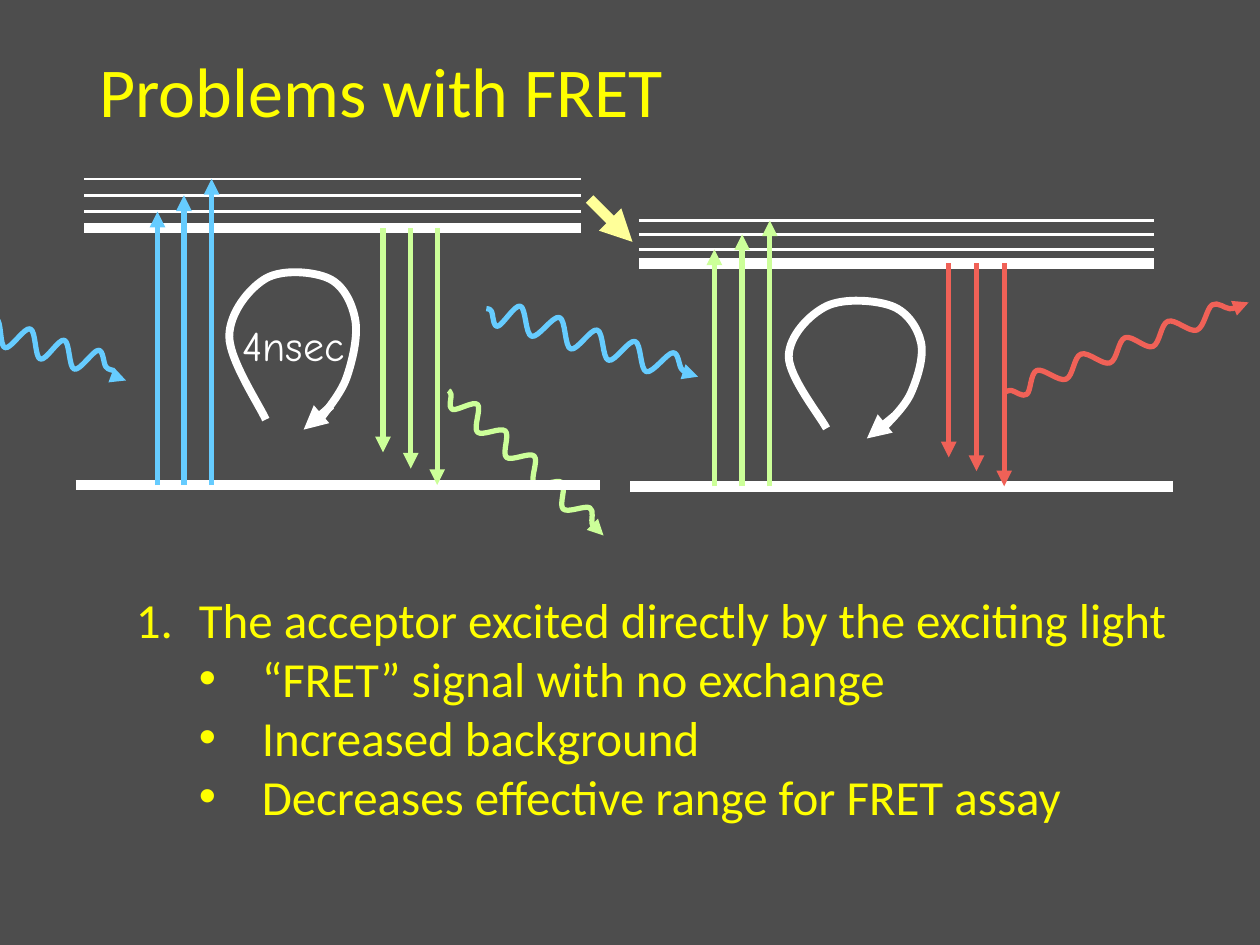
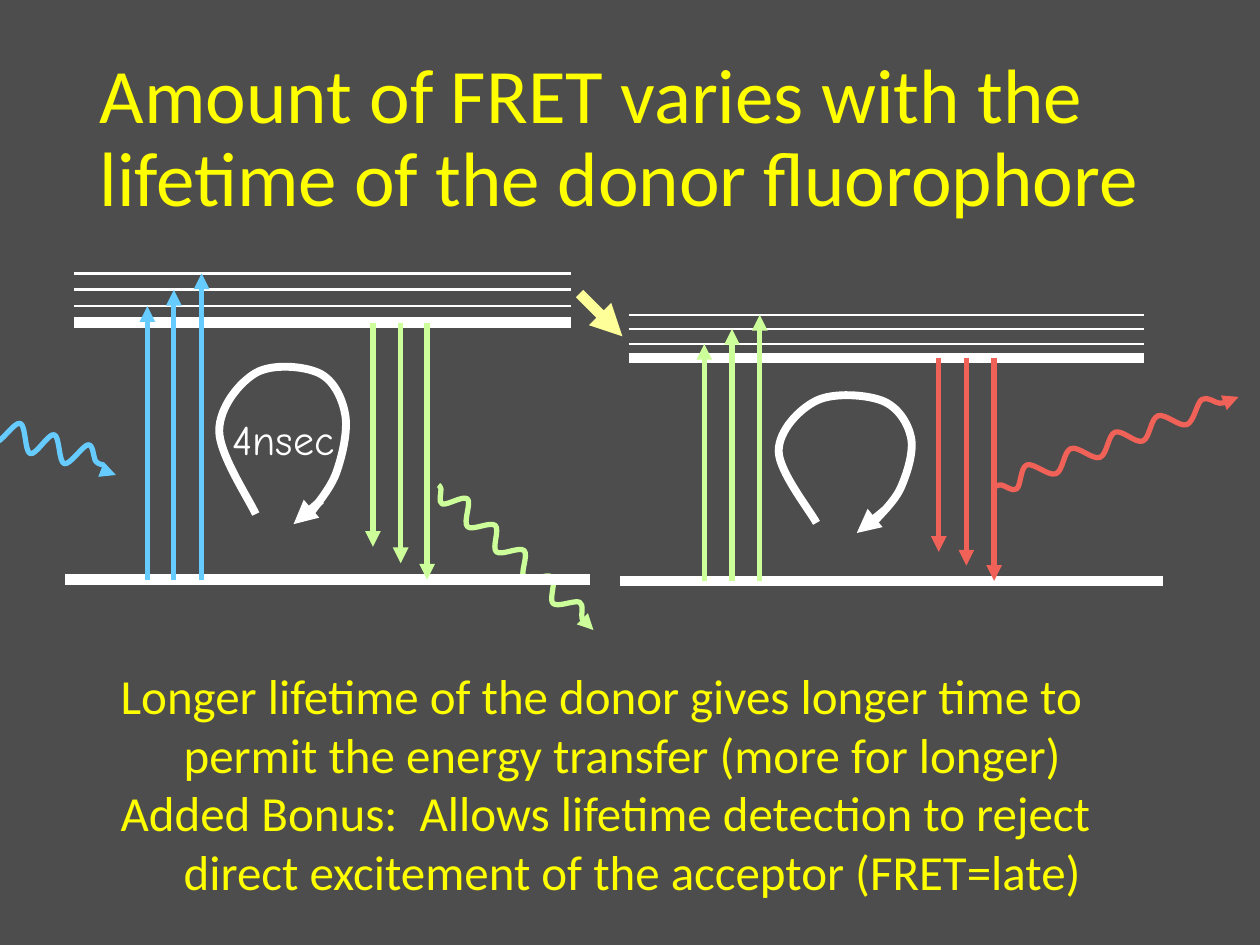
"""Build two slides on FRET with a shared donor and acceptor energy diagram."""
from lxml.etree import SubElement
from pptx import Presentation
from pptx.dml.color import RGBColor
from pptx.enum.shapes import MSO_CONNECTOR
from pptx.enum.text import MSO_ANCHOR, MSO_AUTO_SIZE, PP_ALIGN
from pptx.oxml.ns import qn
from pptx.util import Pt

PX = 9144
GRAY, WHITE, YELLOW, PALE_YELLOW = "4D4D4D", "FFFFFF", "FFFF00", "FFFF99"
BLUE, GREEN, RED = "66CCFF", "CCFF99", "F06157"
BODY_FONT, LABEL_FONT = "Calibri", "Comic Neue"
THIN, MEDIUM, LOOP, THICK = 1.5, 3, 4.5, 6

EXCITING_WAVE = [(-55, 247), (-52, 249), (-47, 261), (-30, 245), (-23, 268), (-3, 253), (4, 276),
                 (24, 261), (32, 285), (51, 270), (59, 293), (78, 278), (84, 291), (90, 294)]
DIRECT_WAVE = [(386, 245), (390, 247), (395, 259), (413, 243), (422, 267), (444, 252), (453, 277),
               (474, 262), (483, 286), (504, 271), (513, 295), (534, 280), (541, 293), (548, 297)]
DONOR_WAVE = [(356, 310), (358, 313), (359, 325), (379, 321), (379, 343), (401, 342), (402, 363),
              (424, 362), (424, 384), (446, 383), (447, 404), (468, 403), (470, 416), (475, 421)]
ACCEPTOR_WAVE = [(798, 311), (803, 310), (815, 313), (823, 294), (846, 301), (858, 281), (881, 288),
                 (893, 268), (915, 275), (927, 255), (950, 262), (962, 242), (976, 245), (984, 243)]
DONOR_LOOP = [(211, 333), (182, 267), (211, 221), (261, 221), (282, 254), (275, 300), (254, 333)]
ACCEPTOR_LOOP = [(656, 340), (626, 283), (656, 243), (708, 243), (731, 272), (723, 312), (701, 340)]


def color(value):
    """Turn a hex string into a colour."""
    return RGBColor.from_string(value)


def steps(first, last, count):
    """Return evenly spaced whole numbers from first to last."""
    return [round(first + (last - first) * index / (count - 1)) for index in range(count)]


class SlideWriter:
    """Hold the deck style and the current slide."""

    def __init__(self):
        """Start a deck with a dark background."""
        self.deck = Presentation()
        self.deck.slide_width, self.deck.slide_height = 1000 * PX, 750 * PX
        fill = self.deck.slide_master.background.fill
        fill.solid()
        fill.fore_color.rgb = color(GRAY)

    def start_page(self, title, size):
        """Add a slide and format its title."""
        self.page = self.deck.slides.add_slide(self.deck.slide_layouts[5])
        self.shapes, self.shift = self.page.shapes, (0, 0)
        box = self.page.shapes.title
        self.place(box, 69, 40, 862, 145)
        frame = box.text_frame
        frame.word_wrap, frame.auto_size = True, MSO_AUTO_SIZE.NONE
        frame.vertical_anchor = MSO_ANCHOR.TOP
        para = frame.paragraphs[0]
        para.alignment, para.line_spacing = PP_ALIGN.LEFT, 0.9
        self.span(para, title, size)

    def start_group(self, shift):
        """Collect the next elements in a group moved by shift."""
        self.shapes, self.shift = self.page.shapes.add_group_shape().shapes, shift

    def end_group(self):
        """Return to the slide itself."""
        self.shapes, self.shift = self.page.shapes, (0, 0)

    def place(self, box, left, top, width, height):
        """Set the position and size of a box."""
        box.left, box.top, box.width, box.height = (n * PX for n in (left, top, width, height))

    def point(self, spot):
        """Turn a shifted spot into EMU."""
        return tuple((n + move) * PX for n, move in zip(spot, self.shift))

    def span(self, para, text, size, font=BODY_FONT, tint=YELLOW):
        """Add one run of text."""
        span = para.add_run()
        span.text = text
        span.font.size, span.font.name = Pt(size), font
        span.font.color.rgb = color(tint)

    def text_box(self, spot, width, height, wrap=False):
        """Add a text box and return its frame."""
        box = self.shapes.add_textbox(*self.point(spot), width * PX, height * PX)
        frame = box.text_frame
        frame.word_wrap, frame.auto_size = wrap, MSO_AUTO_SIZE.SHAPE_TO_FIT_TEXT
        return frame

    def label(self, text, spot, width, height):
        """Add a centred label."""
        frame = self.text_box(spot, width, height)
        frame.vertical_anchor = MSO_ANCHOR.MIDDLE
        para = frame.paragraphs[0]
        para.alignment = PP_ALIGN.CENTER
        self.span(para, text, 24, LABEL_FONT, WHITE)

    def body(self, items, spot, width, height, wrap):
        """Add hanging paragraphs from pairs of text and marker."""
        frame = self.text_box(spot, width, height, wrap)
        for index, (text, marker) in enumerate(items):
            para = frame.paragraphs[0] if index == 0 else frame.add_paragraph()
            para.level = 1 if marker == "•" else 0
            self.span(para, text, 28)
            properties = para._p.get_or_add_pPr()
            properties.set("marL", str(50 * PX * (para.level + 1)))
            properties.set("indent", str(-50 * PX))
            if marker == "•":
                SubElement(properties, qn("a:buFont"), typeface="Arial")
                SubElement(properties, qn("a:buChar"), char=marker)
            elif marker:
                SubElement(properties, qn("a:buAutoNum"), type="arabicPeriod")

    def line(self, start, end, tint, weight, arrow=False):
        """Add a straight line, with an arrowhead if asked."""
        line = self.shapes.add_connector(MSO_CONNECTOR.STRAIGHT, *self.point(start), *self.point(end))
        line.line.color.rgb, line.line.width = color(tint), Pt(weight)
        properties = line.element.spPr
        if arrow:
            SubElement(properties.find(qn("a:ln")), qn("a:tailEnd"), type="triangle")
        SubElement(properties, qn("a:effectLst"))

    def curve(self, spots, tint, weight):
        """Add a smooth open curve through the spots."""
        points = [self.point(spot) for spot in spots]
        builder = self.shapes.build_freeform(*points[0])
        builder.add_line_segments(points[1:], close=False)
        shape = builder.convert_to_shape()
        shape.shadow.inherit = False
        shape.fill.background()
        shape.line.color.rgb, shape.line.width = color(tint), Pt(weight)
        left, top = (min(values) for values in zip(*points))
        local = [(x - left, y - top) for x, y in points]
        padded = [local[0], *local, local[-1]]
        segments = list(shape.element.iter(qn("a:lnTo")))
        for segment, before, start, end, after in zip(segments, padded, local, local[1:], padded[3:]):
            leave = [s + (e - b) / 6 for b, s, e in zip(before, start, end)]
            arrive = [e - (a - s) / 6 for s, e, a in zip(start, end, after)]
            bezier = SubElement(segment.getparent(), qn("a:cubicBezTo"))
            for x, y in (leave, arrive, end):
                SubElement(bezier, qn("a:pt"), x=str(round(x)), y=str(round(y)))
            segment.getparent().replace(segment, bezier)

    def curved_arrow(self, spots, start, end, tint, weight=MEDIUM):
        """Add a curve that finishes in a short arrow."""
        self.curve(spots, tint, weight)
        self.line(start, end, tint, weight, True)

    def molecule(self, ground, ground_ends, levels, level_ends, rising, falling, lowest, tints):
        """Add the energy levels and transitions of one fluorophore."""
        def level(ends, y, weight):
            self.line((ends[0], y), (ends[1], y), WHITE, weight)

        level(ground_ends, ground, THICK)
        for y in levels:
            level(level_ends, y, THICK if y == levels[0] else THIN)
        for x, y in zip(rising, levels[1:]):
            self.line((x, ground), (x, y), tints[0], MEDIUM, True)
        for x, y in zip(falling, steps(lowest, ground, 3)):
            self.line((x, levels[0]), (x, y), tints[1], MEDIUM, True)

    def energy_diagram(self, shift, direct_excitation):
        """Add the donor, the acceptor and the light between them."""
        self.start_group(shift)
        if direct_excitation:
            self.curved_arrow(DIRECT_WAVE, (545, 296), (554, 299), BLUE)
        self.curved_arrow(DONOR_WAVE, (473, 419), (479, 425), GREEN)
        self.curved_arrow(EXCITING_WAVE, (92, 299), (100, 302), BLUE)
        self.molecule(385, (60, 476), steps(181, 142, 4), (67, 461), steps(125, 168, 3),
                      steps(304, 347, 3), 359, (BLUE, GREEN))
        self.curved_arrow(DONOR_LOOP, (263, 322), (241, 341), WHITE, LOOP)
        self.label("4nsec", (178, 245), 110, 57)
        self.curved_arrow(ACCEPTOR_WAVE, (981, 244), (991, 240), RED)
        self.molecule(386, (500, 931), steps(209, 175, 4), (507, 916), steps(567, 611, 3),
                      steps(753, 797, 3), 363, (GREEN, RED))
        self.curved_arrow(ACCEPTOR_LOOP, (710, 330), (688, 348), WHITE, LOOP)
        self.line((468, 158), (502, 192), PALE_YELLOW, THICK, True)
        self.end_group()


def main():
    """Write both slides and save the deck."""
    writer = SlideWriter()

    writer.start_page("Problems with FRET", 40)
    writer.energy_diagram((0, 0), True)
    writer.body([("The acceptor excited directly by the exciting light", "1."),
                 ("“FRET” signal with no exchange", "•"),
                 ("Increased background", "•"),
                 ("Decreases effective range for FRET assay", "•")],
                (98, 463), 847, 199, False)

    writer.start_page("Amount of FRET varies with the lifetime of the donor fluorophore", 44)
    writer.energy_diagram((-8, 75), False)
    writer.body([("Longer lifetime of the donor gives longer time to permit the energy transfer "
                  "(more for longer)", ""),
                 ("Added Bonus:  Allows lifetime detection to reject direct excitement of the "
                  "acceptor (FRET=late)", "")],
                (86, 523), 850, 199, True)

    writer.deck.save("out.pptx")


if __name__ == "__main__":
    main()
